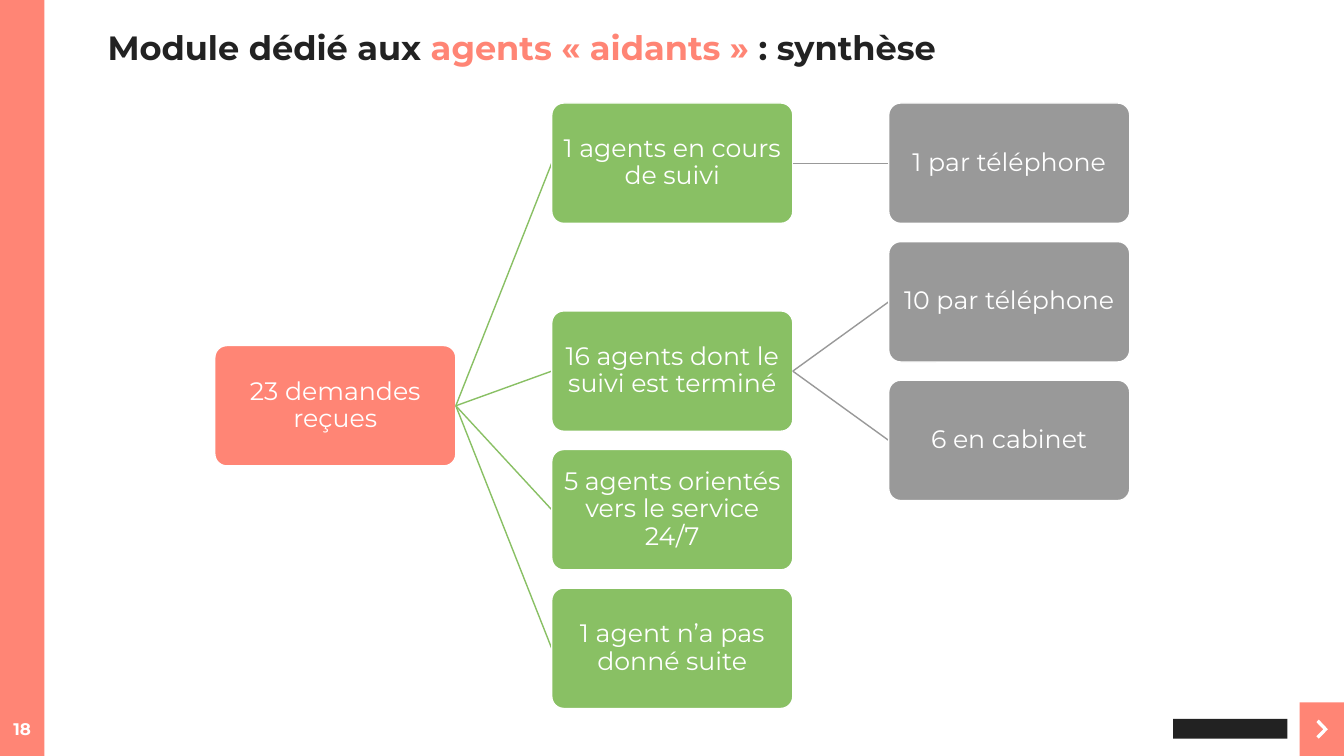
"""Build the summary slide of the module for caregiver staff."""
from lxml import etree
from pptx import Presentation
from pptx.dml.color import RGBColor
from pptx.enum.shapes import MSO_CONNECTOR as CONN, MSO_SHAPE as SHAPE
from pptx.enum.text import MSO_ANCHOR as ANCHOR, PP_ALIGN as ALIGN
from pptx.oxml.ns import qn
from pptx.util import Pt

CORAL, GREEN, GREY, DARK, WHITE = "FF8575", "89C064", "999999", "222222", "FFFFFF"
BOX_W, BOX_H = 172.2, 86
LEFT, TOP, COL_STEP, ROW_STEP = 153.4, 73.6, 240.7, 99

TREE = ("23 demandes reçues", 1.75, [
    ("1 agents en cours de suivi", 0, [("1 par téléphone", 0, [])]),
    ("16 agents dont le suivi est terminé", 1.5, [
        ("10 par téléphone", 1, []),
        ("6 en cabinet", 2, []),
    ]),
    ("5 agents orientés vers le service 24/7", 2.5, []),
    ("1 agent n’a pas donné suite", 3.5, []),
])
LEVEL_COLORS = [CORAL, GREEN, GREY]


def rgb(color):
    return RGBColor.from_string(color)


class Deck:
    font = "Montserrat"

    def __init__(self, prs):
        self.s = prs.slides.add_slide(prs.slide_layouts[6])

    def paint(self, sp, fill, line=None):
        sp.shadow.inherit = False
        sp.fill.solid()
        sp.fill.fore_color.rgb = rgb(fill)
        if line:
            sp.line.color.rgb = rgb(line)
            sp.line.width = Pt(1)
        else:
            sp.line.fill.background()
        return sp

    def shape(self, kind, x, y, w, h, fill, line=None):
        sp = self.s.shapes.add_shape(kind, Pt(x), Pt(y), Pt(w), Pt(h))
        return self.paint(sp, fill, line)

    def polygon(self, points, fill):
        first, *rest = [(Pt(x), Pt(y)) for x, y in points]
        fb = self.s.shapes.build_freeform(*first)
        fb.add_line_segments(rest, close=True)
        return self.paint(fb.convert_to_shape(), fill)

    def add_runs(self, p, runs, size, bold=False):
        for text, color in runs:
            r = p.add_run()
            r.text = text
            r.font.name, r.font.size, r.font.bold = self.font, Pt(size), bold
            r.font.color.rgb = rgb(color)

    def text(self, x, y, w, h, runs, size, align=ALIGN.LEFT, anchor=ANCHOR.TOP, wrap=True):
        tf = self.s.shapes.add_textbox(Pt(x), Pt(y), Pt(w), Pt(h)).text_frame
        tf.word_wrap, tf.vertical_anchor = wrap, anchor
        p = tf.paragraphs[0]
        p.alignment = align
        self.add_runs(p, runs, size, bold=True)

    def box(self, x, y, label, fill):
        sp = self.shape(SHAPE.ROUNDED_RECTANGLE, x, y, BOX_W, BOX_H, fill, WHITE)
        sp.adjustments[0] = 0.1
        tf = sp.text_frame
        tf.word_wrap, tf.vertical_anchor = True, ANCHOR.MIDDLE
        tf.margin_left = tf.margin_right = tf.margin_top = tf.margin_bottom = Pt(0.7)
        p = tf.paragraphs[0]
        p.alignment, p.line_spacing = ALIGN.CENTER, 0.9
        self.add_runs(p, [(label, WHITE)], 18)

    def line(self, x1, y1, x2, y2, color):
        c = self.s.shapes.add_connector(CONN.STRAIGHT, Pt(x1), Pt(y1), Pt(x2), Pt(y2))
        c.line.color.rgb = rgb(color)
        c.line.width = Pt(1)
        etree.SubElement(c._element.spPr, qn("a:effectLst"))

    def branch(self, node, level=0):
        label, row, children = node
        x, y = LEFT + level * COL_STEP, TOP + row * ROW_STEP
        self.box(x, y, label, LEVEL_COLORS[level])
        for child in children:
            child_mid = TOP + child[1] * ROW_STEP + BOX_H / 2
            self.line(x + BOX_W, y + BOX_H / 2, x + COL_STEP, child_mid, LEVEL_COLORS[level + 1])
            self.branch(child, level + 1)


def main():
    prs = Presentation()
    prs.slide_width, prs.slide_height = Pt(960), Pt(540)
    deck = Deck(prs)
    deck.shape(SHAPE.RECTANGLE, 0, 0, 31.7, 540, CORAL)
    deck.shape(SHAPE.RECTANGLE, 928.3, 501.8, 31.7, 38.2, CORAL)
    deck.polygon([(940.3, 515.8), (945.2, 520.9), (940.3, 525.9),
                  (942, 527.7), (948.5, 520.9), (942, 514)], WHITE)
    deck.shape(SHAPE.RECTANGLE, 838, 513.5, 81.5, 14.2, DARK)
    deck.text(0, 506.2, 31.7, 28.8, [("18", WHITE)], 12, ALIGN.CENTER, ANCHOR.MIDDLE, False)
    deck.text(69.8, 15.8, 849.6, 36, [("Module dédié aux ", DARK),
                                      ("agents « aidants » ", CORAL),
                                      (": synthèse", DARK)], 24)
    deck.branch(TREE)
    prs.save("out.pptx")


if __name__ == "__main__":
    main()
